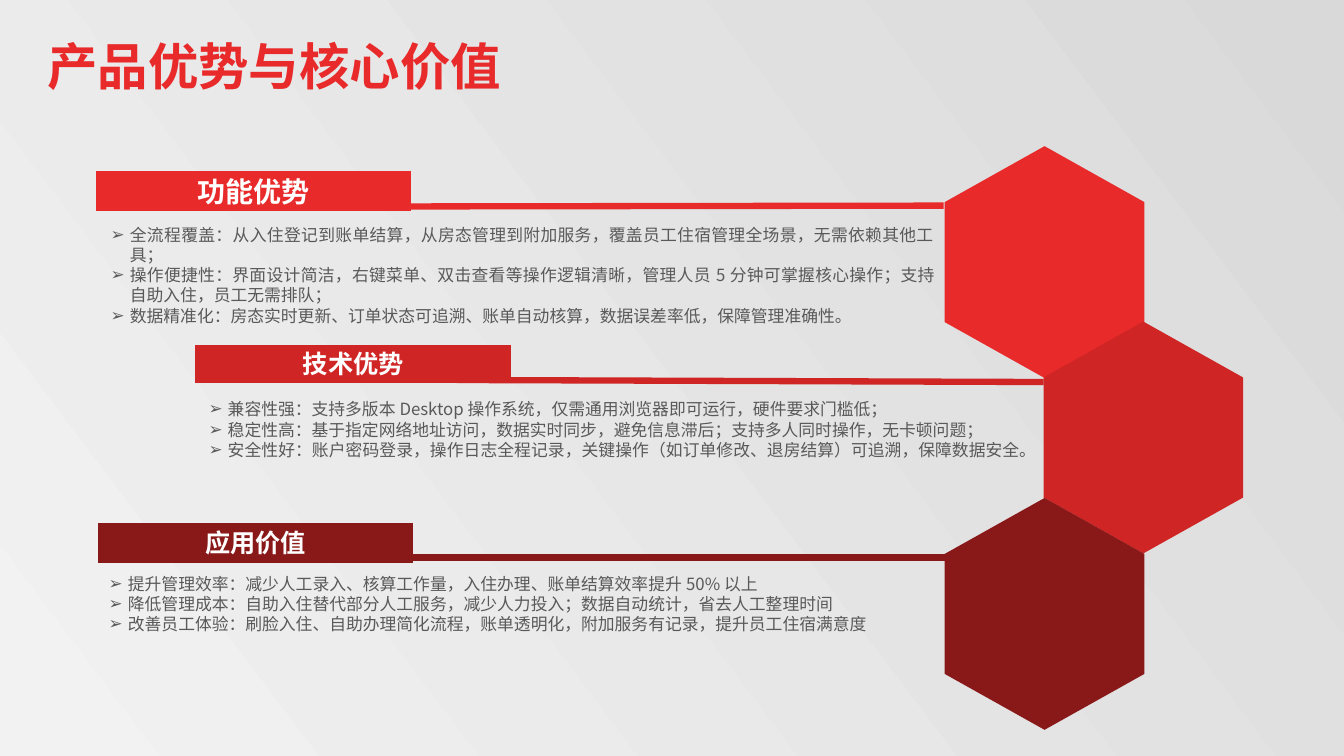
from lxml.etree import SubElement
from pptx import Presentation
from pptx.dml.color import RGBColor
from pptx.enum.shapes import MSO_CONNECTOR, MSO_SHAPE
from pptx.enum.text import MSO_ANCHOR, MSO_AUTO_SIZE, PP_ALIGN
from pptx.oxml.ns import qn
from pptx.util import Pt

# Content: lengths in px, 100 px to the inch
TITLE = {"text": "产品优势与核心价值", "box": (37, 30, 472, 71)}
SECTIONS = [
    {"head": "功能优势", "color": "red", "size": "head_big",
     "bar": (98, 173, 307, 33), "line": (278, 205, 936, 204),
     "hex": (921, 161), "body": (100, 218, 837, 111),
     "points": [
         "全流程覆盖：从入住登记到账单结算，从房态管理到附加服务，覆盖员工住宿管理全场景，无需依赖其他工具；",
         "操作便捷性：界面设计简洁，右键菜单、双击查看等操作逻辑清晰，管理人员 5 分钟可掌握核心操作；支持自助入住，员工无需排队；",
         "数据精准化：房态实时更新、订单状态可追溯、账单自动核算，数据误差率低，保障管理准确性。",
     ]},
    {"head": "技术优势", "color": "mid", "size": "head",
     "bar": (197, 345, 307, 32), "line": (453, 377, 1035, 379),
     "hex": (1019, 335), "body": (197, 391, 825, 71),
     "points": [
         "兼容性强：支持多版本 Desktop 操作系统，仅需通用浏览器即可运行，硬件要求门槛低；",
         "稳定性高：基于指定网络地址访问，数据实时同步，避免信息滞后；支持多人同时操作，无卡顿问题；",
         "安全性好：账户密码登录，操作日志全程记录，关键操作（如订单修改、退房结算）可追溯，保障数据安全。",
     ]},
    {"head": "应用价值", "color": "dark", "size": "head",
     "bar": (100, 522, 307, 33), "line": (278, 553, 937, 553),
     "hex": (921, 510), "body": (98, 564, 838, 71),
     "points": [
         "提升管理效率：减少人工录入、核算工作量，入住办理、账单结算效率提升 50% 以上",
         "降低管理成本：自助入住替代部分人工服务，减少人力投入；数据自动统计，省去人工整理时间",
         "改善员工体验：刷脸入住、自助办理简化流程，账单透明化，附加服务有记录，提升员工住宿满意度",
     ]},
]
THEME = {
    "font": "Noto Sans CJK JP",
    "colors": {"red": "E82A2A", "mid": "CF2525", "dark": "891818",
               "white": "FFFFFF", "text": "595959",
               "shade": "D9D9D9", "light": "F2F2F2"},
    "sizes": {"title": 36, "head_big": 20, "head": 18, "body": 12},
    "stroke": 4.5,
}
SCALE = 9144
HEX_SIZE = (230, 198)
INDENT = 19


def px(*nums):
    return [n * SCALE for n in nums]


def color(name):
    return RGBColor.from_string(THEME["colors"][name])


def add_run(para, text, size, tint, bold=False):
    run = para.add_run()
    run.text = text
    font = run.font
    font.size = Pt(THEME["sizes"][size])
    font.bold = bold
    font.color.rgb = color(tint)
    font.name = THEME["font"]
    SubElement(run._r.get_or_add_rPr(), qn("a:ea"), typeface=THEME["font"])


def add_shape(slide, kind, box, tint):
    shape = slide.shapes.add_shape(kind, *px(*box))
    shape.shadow.inherit = False
    shape.fill.solid()
    shape.fill.fore_color.rgb = color(tint)
    return shape


def add_hex(slide, part):
    shape = add_shape(slide, MSO_SHAPE.HEXAGON, part["hex"] + HEX_SIZE, part["color"])
    shape.adjustments[0] = 0.28
    shape.rotation = 270
    shape.line.fill.background()


def set_stroke(shape, tint):
    shape.line.color.rgb = color(tint)
    shape.line.width = Pt(THEME["stroke"])
    # Square corners
    stroke = shape._element.spPr.find(qn("a:ln"))
    SubElement(stroke, qn("a:miter"), lim="800000")


def add_head(slide, part):
    rule = slide.shapes.add_connector(MSO_CONNECTOR.STRAIGHT, *px(*part["line"]))
    set_stroke(rule, part["color"])
    SubElement(rule._element.spPr, qn("a:effectLst"))
    bar = add_shape(slide, MSO_SHAPE.RECTANGLE, part["bar"], part["color"])
    set_stroke(bar, part["color"])
    bar.text_frame.vertical_anchor = MSO_ANCHOR.MIDDLE
    para = bar.text_frame.paragraphs[0]
    para.alignment = PP_ALIGN.CENTER
    add_run(para, part["head"], part["size"], "white", True)


def add_box(slide, box, wrap):
    frame = slide.shapes.add_textbox(*px(*box)).text_frame
    frame.word_wrap = wrap
    frame.auto_size = MSO_AUTO_SIZE.SHAPE_TO_FIT_TEXT
    return frame


def add_body(slide, part):
    frame = add_box(slide, part["body"], True)
    for i, point in enumerate(part["points"]):
        para = frame.add_paragraph() if i else frame.paragraphs[0]
        para.alignment = PP_ALIGN.JUSTIFY
        props = para._p.get_or_add_pPr()
        props.set("marL", str(INDENT * SCALE))
        props.set("indent", str(-INDENT * SCALE))
        SubElement(props, qn("a:buFont"), typeface="Arial")
        SubElement(props, qn("a:buChar"), char="➢")
        add_run(para, point, "body", "text")


def main():
    deck = Presentation()
    deck.slide_width, deck.slide_height = px(1333, 750)
    slide = deck.slides.add_slide(deck.slide_layouts[6])

    # Background, dark at top right
    fill = slide.background.fill
    fill.gradient()
    fill.gradient_angle = 360 - 143
    for stop, tint in zip(fill.gradient_stops, ("shade", "light")):
        stop.color.rgb = color(tint)

    # Hexagons lie behind the text
    for part in SECTIONS:
        add_hex(slide, part)

    # Sections
    for part in SECTIONS:
        add_head(slide, part)
        add_body(slide, part)

    # Title
    frame = add_box(slide, TITLE["box"], False)
    add_run(frame.paragraphs[0], TITLE["text"], "title", "red", True)

    deck.save("out.pptx")


if __name__ == "__main__":
    main()
